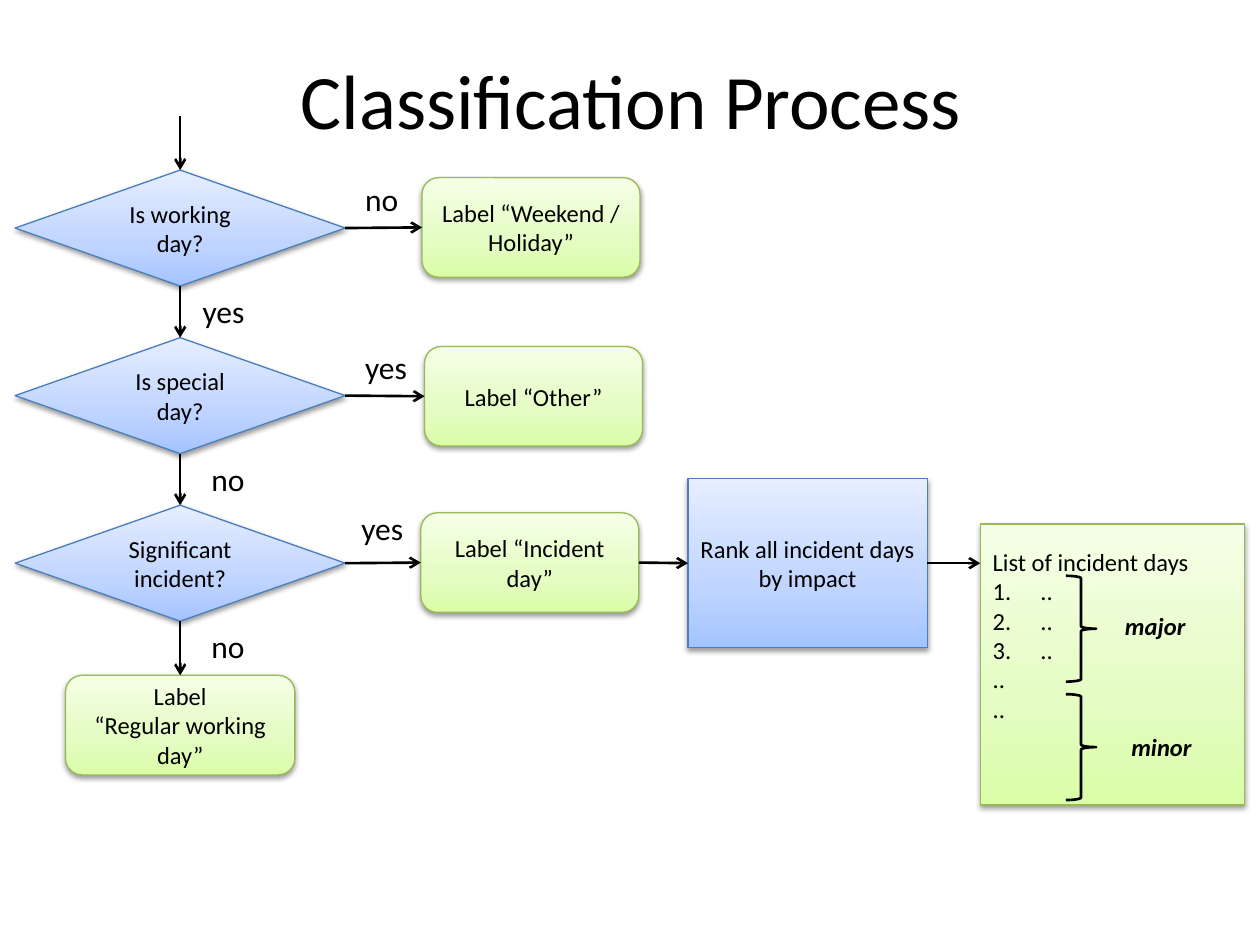
from copy import deepcopy

from lxml import etree
from pptx import Presentation
from pptx.dml.color import RGBColor
from pptx.enum.shapes import MSO_CONNECTOR, MSO_SHAPE
from pptx.enum.text import MSO_ANCHOR, PP_ALIGN
from pptx.oxml import parse_xml
from pptx.oxml.ns import nsdecls, qn
from pptx.util import Inches, Pt

STRAIGHT = MSO_CONNECTOR.STRAIGHT
DIAMOND, PROCESS = MSO_SHAPE.DIAMOND, MSO_SHAPE.FLOWCHART_PROCESS
ROUNDED, RECTANGLE = MSO_SHAPE.ROUNDED_RECTANGLE, MSO_SHAPE.RECTANGLE
BRACE = MSO_SHAPE.RIGHT_BRACE
TOP, MIDDLE = MSO_ANCHOR.TOP, MSO_ANCHOR.MIDDLE
LEFT, CENTER = PP_ALIGN.LEFT, PP_ALIGN.CENTER
SITE_TOP, SITE_LEFT, SITE_BOTTOM, SITE_RIGHT = range(4)

FONT = "Calibri"
BLACK = RGBColor(0x00, 0x00, 0x00)
BLUE_LINE = RGBColor(0x4B, 0x7E, 0xBC)
GREEN_LINE = RGBColor(0x98, 0xB9, 0x55)
BLUE_STOPS = (RGBColor(0xA4, 0xC4, 0xFF), RGBColor(0xBF, 0xD4, 0xFF), RGBColor(0xE6, 0xEE, 0xFF))
GREEN_STOPS = (RGBColor(0xDA, 0xFD, 0xA7), RGBColor(0xE4, 0xFC, 0xC2), RGBColor(0xF5, 0xFF, 0xE7))
BLUE, GREEN = (BLUE_LINE, BLUE_STOPS), (GREEN_LINE, GREEN_STOPS)
STOP_POSITIONS = (0, 0.35, 1)

DIAMOND_LEFT, DIAMOND_TOP, DIAMOND_STEP = 0.12, 1.35, 1.33
DIAMOND_SIZE = (2.62, 0.92)
LABEL_SIZE = (1.73, 0.79)
# question, answer downwards and its left, answer to the right and its place, outcome and its place
DECISIONS = (
    ("Is working day?", "yes", 1.51, "no", (2.8, 1.38), "Label “Weekend / Holiday”", (3.35, 1.41)),
    ("Is special day?", "no", 1.58, "yes", (2.8, 2.71), "Label “Other”", (3.37, 2.75)),
    ("Significant incident?", "no", 1.58, "yes", (2.77, 3.99), "Label “Incident day”", (3.34, 4.07)),
)


def add_span(para, text, size, emphasis=False):
    span = para.add_run()
    span.text = text
    span.font.name = FONT
    span.font.size = Pt(size)
    span.font.color.rgb = BLACK
    if emphasis:
        span.font.bold = span.font.italic = True


def add_label(page, text, box, size=18, emphasis=False):
    label = page.shapes.add_textbox(*map(Inches, box))
    label.text_frame.word_wrap = False
    add_span(label.text_frame.paragraphs[0], text, size, emphasis)


def add_title(page, text, box):
    title = page.shapes.add_textbox(*map(Inches, box))
    frame = title.text_frame
    frame.word_wrap = True
    frame.vertical_anchor = MIDDLE
    frame.paragraphs[0].alignment = CENTER
    add_span(frame.paragraphs[0], text, 44)


def fill_gradient(shape, colours):
    shape.fill.gradient()
    shape.fill.gradient_angle = 90
    stops = shape.fill._fill._gradFill.find(qn("a:gsLst"))
    stops.append(deepcopy(stops[0]))
    for stop, colour, position in zip(shape.fill.gradient_stops, colours, STOP_POSITIONS):
        stop.color.rgb = colour
        stop.position = position


def add_soft_shadow(shape):
    shape.shadow.inherit = False
    effects = shape._element.spPr.find(qn("a:effectLst"))
    effects.append(parse_xml(
        f'<a:outerShdw {nsdecls("a")} blurRad="{Pt(3.1)}" dist="{Pt(1.6)}" dir="5400000" rotWithShape="0">'
        '<a:srgbClr val="000000"><a:alpha val="38000"/></a:srgbClr></a:outerShdw>'))


def add_node(page, kind, box, theme, lines=()):
    """Add a shaded shape whose centred lines share one paragraph."""
    node = page.shapes.add_shape(kind, *map(Inches, box))
    line_colour, stops = theme
    fill_gradient(node, stops)
    node.line.color.rgb = line_colour
    node.line.width = Pt(0.75)
    add_soft_shadow(node)
    frame = node.text_frame
    frame.word_wrap = True
    frame.vertical_anchor = MIDDLE
    para = frame.paragraphs[0]
    para.alignment = CENTER
    for index, line in enumerate(lines):
        if index:
            para.add_line_break()
        add_span(para, line, 14)
    return node


def add_arrow(page, start, end, source=None, target=None):
    """Draw an arrow; source and target are (shape, site) pairs to join."""
    arrow = page.shapes.add_connector(STRAIGHT, *map(Inches, start + end))
    if source:
        arrow.begin_connect(*source)
    if target:
        arrow.end_connect(*target)
    arrow.line.color.rgb = BLACK
    arrow.line.width = Pt(1.5)
    etree.SubElement(arrow.line._get_or_add_ln(), qn("a:tailEnd"), type="arrow")
    etree.SubElement(arrow._element.spPr, qn("a:effectLst"))


def join(page, source, source_site, target, target_site):
    add_arrow(page, (0, 0), (1, 1), (source, source_site), (target, target_site))


def add_decisions(page):
    """Add the column of questions with their outcomes; return the last outcome."""
    width, height = DIAMOND_SIZE
    middle = DIAMOND_LEFT + width / 2
    previous = None
    for row, (question, down, down_left, across, across_at, outcome, outcome_at) in enumerate(DECISIONS):
        top = DIAMOND_TOP + row * DIAMOND_STEP
        diamond = add_node(page, DIAMOND, (DIAMOND_LEFT, top, width, height), BLUE, [question])
        label = add_node(page, ROUNDED, outcome_at + LABEL_SIZE, GREEN, [outcome])
        if previous:
            join(page, previous, SITE_BOTTOM, diamond, SITE_TOP)
        else:
            add_arrow(page, (middle, 0.92), (middle, top), target=(diamond, SITE_TOP))
        join(page, diamond, SITE_RIGHT, label, SITE_LEFT)
        add_label(page, across, across_at + (0.54, 0.4))
        add_label(page, down, (down_left, top + height, 0.54, 0.4))
        previous = diamond
    regular = add_node(page, ROUNDED, (0.52, 5.36, 1.82, 0.79), GREEN, ["Label", "“Regular working day”"])
    join(page, previous, SITE_BOTTOM, regular, SITE_TOP)
    return label


def number_para(para):
    props = para._p.get_or_add_pPr()
    props.set("marL", str(Inches(0.38)))
    props.set("indent", str(Inches(-0.38)))
    etree.SubElement(props, qn("a:buFont"), typeface="+mj-lt")
    etree.SubElement(props, qn("a:buAutoNum"), type="arabicPeriod")


def add_incident_list(page, box):
    left, top = box[:2]
    panel = add_node(page, RECTANGLE, box, GREEN)
    frame = panel.text_frame
    frame.vertical_anchor = TOP
    frame.margin_top = Inches(0.18)
    for index, text in enumerate(("List of incident days", "..", "..", "..", "..", "..")):
        para = frame.add_paragraph() if index else frame.paragraphs[0]
        para.alignment = LEFT
        if 1 <= index <= 3:
            number_para(para)
        add_span(para, text, 14)
    for text, brace_top, text_left, text_top in (("major", 0.41, 1.05, 0.64), ("minor", 1.35, 1.1, 1.6)):
        brace = page.shapes.add_shape(
            BRACE, Inches(left + 0.68), Inches(top + brace_top), Inches(0.24), Inches(0.84))
        brace.shadow.inherit = False
        brace.fill.background()
        brace.line.color.rgb = BLACK
        brace.line.width = Pt(1.5)
        add_label(page, text, (left + text_left, top + text_top, 0.68, 0.34), 14, True)


def add_ranking(page, incident_label):
    rank = add_node(page, PROCESS, (5.46, 3.8, 1.9, 1.34), BLUE, ["Rank all incident days by impact"])
    join(page, incident_label, SITE_RIGHT, rank, SITE_LEFT)
    add_incident_list(page, (7.78, 4.16, 2.1, 2.23))
    add_arrow(page, (7.36, 4.47), (7.78, 4.47), source=(rank, SITE_RIGHT))


def main():
    deck = Presentation()
    deck.slide_width, deck.slide_height = Inches(10), Inches(7.5)
    page = deck.slides.add_slide(deck.slide_layouts[6])
    add_title(page, "Classification Process", (0.52, 0.3, 8.98, 0.97))
    add_ranking(page, add_decisions(page))
    deck.save("out.pptx")


if __name__ == "__main__":
    main()
